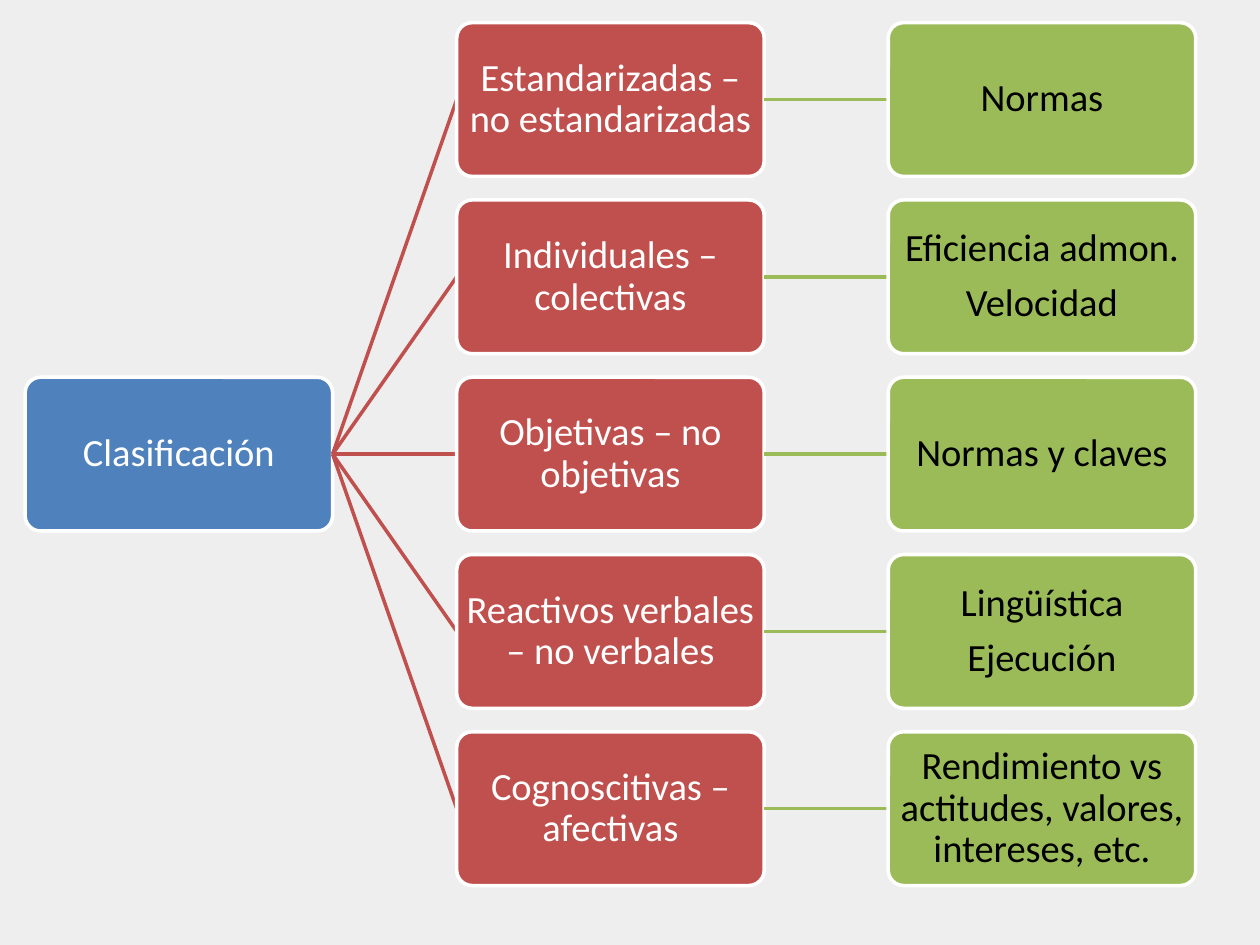
import pptx
import pptx.util
import pptx.dml.color
import pptx.enum.shapes
import pptx.enum.text
import pptx.oxml

COLORS = {
    "background": "EEEEEE",
    "root": "4F81BD",
    "type": "C0504D",
    "detail": "9BBB59",
    "white": "FFFFFF",
    "black": "000000",
}

# Grid: three columns and five rows of equal boxes
LEFT, TOP = 0.2, 0.18
BOX_WIDTH, BOX_HEIGHT = 2.44, 1.22
COLUMN_STEP, ROW_STEP = 3.425, 1.407
ROOT_ROW = 2

BRANCHES = [
    ("Estandarizadas – no estandarizadas", ["Normas"]),
    ("Individuales – colectivas", ["Eficiencia admon.", "Velocidad"]),
    ("Objetivas – no objetivas", ["Normas y claves"]),
    ("Reactivos verbales – no verbales", ["Lingüística", "Ejecución"]),
    ("Cognoscitivas – afectivas", ["Rendimiento vs actitudes, valores, intereses, etc."]),
]

inches = pptx.util.Inches
points = pptx.util.Pt
color = pptx.dml.color.RGBColor.from_string

presentation = pptx.Presentation()
presentation.slide_width, presentation.slide_height = inches(10), inches(7.5)
slide = presentation.slides.add_slide(presentation.slide_layouts[6])
slide.background.fill.solid()
slide.background.fill.fore_color.rgb = color(COLORS["background"])


def add_box(column, row, texts, fill, font_color):
    shape = slide.shapes.add_shape(
        pptx.enum.shapes.MSO_SHAPE.ROUNDED_RECTANGLE,
        inches(LEFT + column * COLUMN_STEP), inches(TOP + row * ROW_STEP),
        inches(BOX_WIDTH), inches(BOX_HEIGHT))
    shape.adjustments[0] = 0.1
    shape.shadow.inherit = False
    shape.fill.solid()
    shape.fill.fore_color.rgb = color(COLORS[fill])
    shape.line.color.rgb = color(COLORS["white"])
    shape.line.width = points(2)

    frame = shape.text_frame
    frame.word_wrap = True
    frame.vertical_anchor = pptx.enum.text.MSO_ANCHOR.MIDDLE
    # The inset includes the part of the rounded corner kept free of text
    frame.margin_left = frame.margin_right = inches(0.02)
    frame.margin_top = frame.margin_bottom = inches(0.02)
    frame.text = "\n".join(texts)
    for paragraph in frame.paragraphs:
        paragraph.alignment = pptx.enum.text.PP_ALIGN.CENTER
        paragraph.line_spacing = 0.9
        paragraph.font.name = "Calibri"
        paragraph.font.size = points(22)
        paragraph.font.color.rgb = color(COLORS[font_color])
    for paragraph in frame.paragraphs[:-1]:
        paragraph.space_after = points(7.7)


def add_link(column, start_row, end_row, line_color):
    """Join the right side of a box to the left side of one in the next column."""
    middle = TOP + BOX_HEIGHT / 2
    connector = slide.shapes.add_connector(
        pptx.enum.shapes.MSO_CONNECTOR.STRAIGHT,
        inches(LEFT + column * COLUMN_STEP + BOX_WIDTH),
        inches(middle + start_row * ROW_STEP),
        inches(LEFT + (column + 1) * COLUMN_STEP),
        inches(middle + end_row * ROW_STEP))
    connector.line.color.rgb = color(COLORS[line_color])
    connector.line.width = points(2)
    connector.element.spPr.append(pptx.oxml.parse_xml(
        '<a:effectLst xmlns:a="http://schemas.openxmlformats.org/drawingml/2006/main"/>'))


# Root box
add_box(0, ROOT_ROW, ["Clasificación"], "root", "white")

# One branch per row: type of test, then its details
for row, (test_type, details) in enumerate(BRANCHES):
    add_link(0, ROOT_ROW, row, "type")
    add_box(1, row, [test_type], "type", "white")
    add_link(1, row, row, "detail")
    add_box(2, row, details, "detail", "black")

presentation.save("out.pptx")
